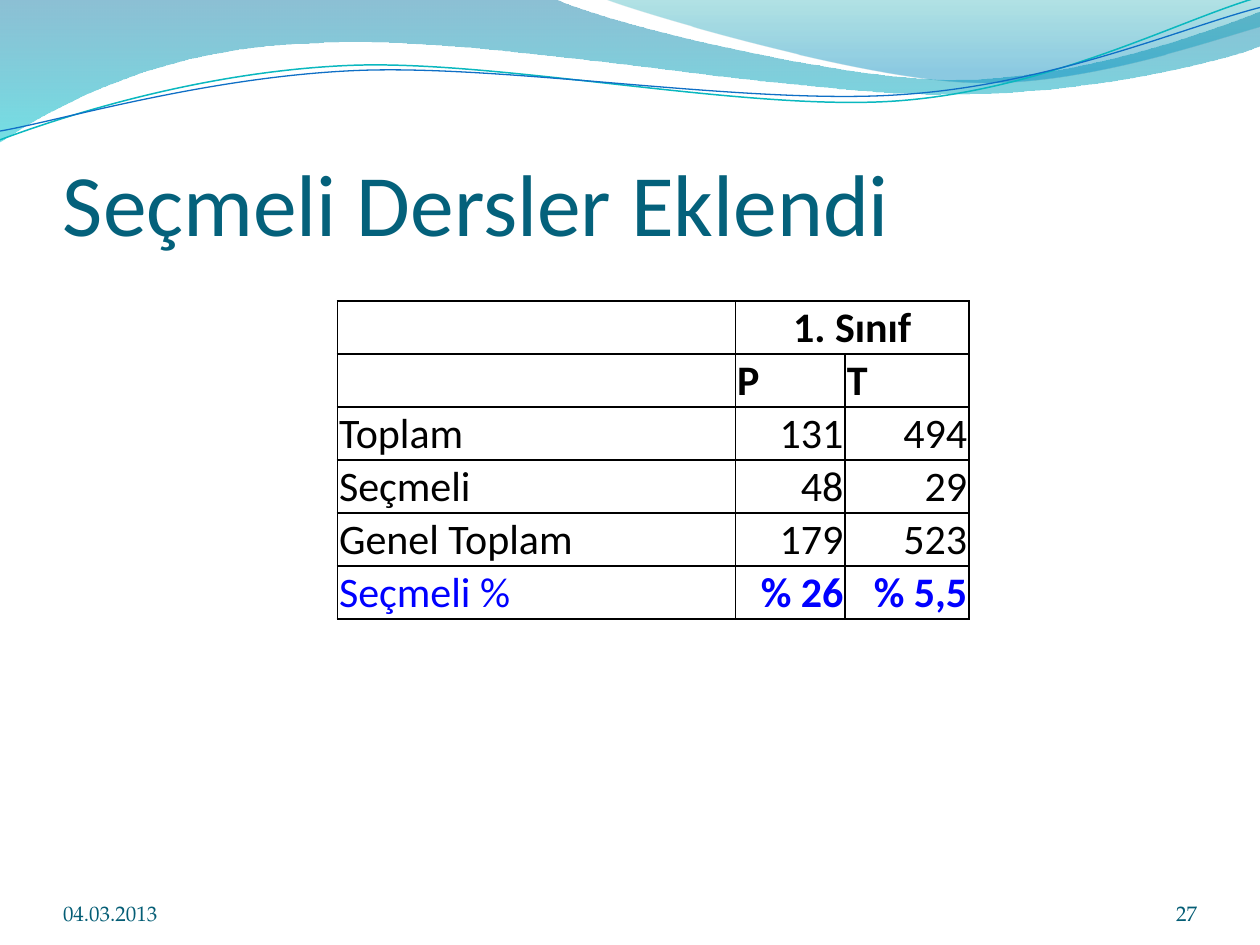
import dataclasses
import math

import pptx
import pptx.dml.color
import pptx.enum.text
import pptx.oxml
import pptx.oxml.ns
import pptx.util
from lxml import etree

Pt = pptx.util.Pt
qn = pptx.oxml.ns.qn
ALIGN = pptx.enum.text.PP_ALIGN
ANCHOR = pptx.enum.text.MSO_ANCHOR


@dataclasses.dataclass(frozen=True)
class Theme:
    title: str = "04617B"
    footer: str = "045D75"
    ink: str = "000000"
    accent: str = "0000FF"
    teal_line: str = "0AB8BF"
    blue_line: str = "0F6FC6"
    left_wave: tuple = ((0, "0074A1", 45), (1, "00C6CF", 55))
    right_wave: tuple = ((0, "00A1A9", 30), (0.8, "008BBF", 45))
    body_font: str = "Calibri"
    footer_font: str = "TeX Gyre Pagella"
    title_size: int = 50
    table_size: int = 24
    footer_size: int = 12


THEME = Theme()

LEFT_WAVE = (
    ((0, 0),), ((316.8, -0.7),),
    ((342.7, 12.2), (478.1, 45.4), (545.8, 45.4)),
    ((614.2, 45.4), (689.8, 18.7), (720, 6.5)),
    ((720.7, 25.9),),
    ((709.2, 31.7), (626.4, 54.7), (537.1, 54)),
    ((447.8, 54), (275, 20.2), (185, 24.5)),
    ((92.9, 25.9), (33.1, 59.8), (-0.7, 81.4)),
    ((0, 0),),
)
RIGHT_WAVE = (
    ((344.9, -0.7),),
    ((366.5, 7.9), (491, 44.6), (553.7, 46.8)),
    ((616.3, 49.7), (691.9, 23), (720, 15.1)),
    ((720, 0),), ((344.9, -0.7),),
)
TEAL_CURVE = (
    ((0, 79.9),),
    ((34.6, 67), (113.8, 41), (199.4, 37.4)),
    ((284.4, 33.8), (427, 64.1), (513.4, 57.6)),
    ((599.8, 51.1), (675.4, 10.8), (718.6, -1.4)),
)
BLUE_CURVE = (
    ((0, 74.9),),
    ((33.8, 69.1), (118.1, 43.9), (203.8, 40.3)),
    ((290.2, 36.7), (429.8, 60.5), (516.2, 54)),
    ((601.9, 48.2), (677.5, 15.1), (720, 4.3)),
)
CURVE_TILT = -2.7
CURVE_CENTER = (359.5, 42)
TABLE_ROWS = (
    ("", "1. Sınıf", ""),
    ("", "P", "T"),
    ("Toplam", "131", "494"),
    ("Seçmeli", "48", "29"),
    ("Genel Toplam", "179", "523"),
    ("Seçmeli %", "% 26", "% 5,5"),
)
COLUMN_WIDTHS = (227.5, 62.75, 70.75)
ROW_HEIGHT = 30.3


def rgb(value):
    return pptx.dml.color.RGBColor.from_string(value)


def apply(target, formats):
    for name, value in formats.items():
        setattr(target, name, value)


def rotate(point, center, degrees):
    angle = math.radians(degrees)
    x, y = point[0] - center[0], point[1] - center[1]
    return (center[0] + x * math.cos(angle) - y * math.sin(angle),
            center[1] + x * math.sin(angle) + y * math.cos(angle))


def add_outline(slide, segments, closed):
    points = [(Pt(x), Pt(y)) for segment in segments for x, y in segment]
    builder = slide.shapes.build_freeform(*points[0], scale=1.0)
    builder.add_line_segments(points[1:], close=closed)
    shape = builder.convert_to_shape()
    shape.shadow.inherit = False
    lines = iter(list(shape.element.iter(qn("a:lnTo"))))
    for segment in segments[1:]:
        line = next(lines)
        if len(segment) == 3:
            curve = etree.Element(qn("a:cubicBezTo"))
            line.addprevious(curve)
            for part in (line, next(lines), next(lines)):
                curve.append(part[0])
                part.getparent().remove(part)
    return shape


def add_wave(slide, segments, stops):
    shape = add_outline(slide, segments, True)
    shape.line.fill.background()
    shape.fill.gradient()
    shape.fill.gradient_angle = 270
    for stop, (position, color, _) in zip(shape.fill.gradient_stops, stops):
        stop.position = position
        stop.color.rgb = rgb(color)
    colors = list(shape.element.spPr.iter(qn("a:srgbClr")))
    for element, (_, _, opacity) in zip(colors, stops):
        alpha = etree.SubElement(element, qn("a:alpha"))
        alpha.set("val", str(opacity * 1000))


def add_curve(slide, segments, color, width):
    level = [[rotate(point, CURVE_CENTER, -CURVE_TILT) for point in segment]
             for segment in segments]
    shape = add_outline(slide, level, False)
    shape.rotation = CURVE_TILT
    shape.fill.background()
    shape.line.color.rgb = rgb(color)
    shape.line.width = Pt(width)


def write_text(frame, text, font, size, color, align=ALIGN.LEFT, bold=False):
    paragraph = frame.paragraphs[0]
    paragraph.alignment = align
    run = paragraph.add_run()
    run.text = text
    apply(run.font, {"name": font, "size": Pt(size), "bold": bold})
    run.font.color.rgb = rgb(color)


def add_text(slide, box, text, font, size, color, align=ALIGN.LEFT, top_inset=0):
    frame = slide.shapes.add_textbox(*map(Pt, box)).text_frame
    apply(frame, {"word_wrap": True, "vertical_anchor": ANCHOR.BOTTOM,
                  "margin_left": 0, "margin_right": 0,
                  "margin_top": Pt(top_inset), "margin_bottom": 0})
    write_text(frame, text, font, size, color, align)


def add_borders(cell, color, width):
    properties = cell._tc.get_or_add_tcPr()
    for side in ("lnL", "lnR", "lnT", "lnB"):
        properties.append(pptx.oxml.parse_xml(
            f'<a:{side} {pptx.oxml.ns.nsdecls("a")} w="{Pt(width)}">'
            f'<a:solidFill><a:srgbClr val="{color}"/></a:solidFill></a:{side}>'))


def cell_format(row, column):
    last = row == len(TABLE_ROWS) - 1
    if row == 0:
        align = ALIGN.CENTER
    else:
        align = ALIGN.RIGHT if row > 1 and column > 0 else ALIGN.LEFT
    return {"align": align, "bold": row < 2 or (last and column > 0),
            "color": THEME.accent if last else THEME.ink}


def add_course_table(slide, left, top):
    table = slide.shapes.add_table(
        len(TABLE_ROWS), len(COLUMN_WIDTHS), Pt(left), Pt(top),
        Pt(sum(COLUMN_WIDTHS)), Pt(ROW_HEIGHT * len(TABLE_ROWS))).table
    apply(table, {"first_row": False, "horz_banding": False})
    for column, width in zip(table.columns, COLUMN_WIDTHS):
        column.width = Pt(width)
    for row_index, texts in enumerate(TABLE_ROWS):
        table.rows[row_index].height = Pt(ROW_HEIGHT)
        for column_index, text in enumerate(texts):
            cell = table.cell(row_index, column_index)
            apply(cell, {"vertical_anchor": ANCHOR.BOTTOM, "margin_left": Pt(1),
                         "margin_right": Pt(1), "margin_top": Pt(0.75),
                         "margin_bottom": 0})
            add_borders(cell, THEME.ink, 1)
            cell.fill.background()
            if text:
                write_text(cell.text_frame, text, THEME.body_font, THEME.table_size,
                           **cell_format(row_index, column_index))
    table.cell(0, 1).merge(table.cell(0, 2))


def main():
    presentation = pptx.Presentation()
    apply(presentation, {"slide_width": Pt(720), "slide_height": Pt(540)})
    slide = presentation.slides.add_slide(presentation.slide_layouts[6])
    add_wave(slide, LEFT_WAVE, THEME.left_wave)
    add_wave(slide, RIGHT_WAVE, THEME.right_wave)
    add_curve(slide, TEAL_CURVE, THEME.teal_line, 0.85)
    add_curve(slide, BLUE_CURVE, THEME.blue_line, 0.75)
    add_text(slide, (36, 55.25, 648, 90), "Seçmeli Dersler Eklendi",
             THEME.body_font, THEME.title_size, THEME.title, top_inset=3.6)
    add_course_table(slide, 192.75, 172)
    footer = (THEME.footer_font, THEME.footer_size, THEME.footer)
    add_text(slide, (624, 500.5, 60, 28.75), "27", *footer, align=ALIGN.RIGHT)
    add_text(slide, (36, 500.5, 168, 28.75), "04.03.2013", *footer)
    presentation.save("out.pptx")


if __name__ == "__main__":
    main()
